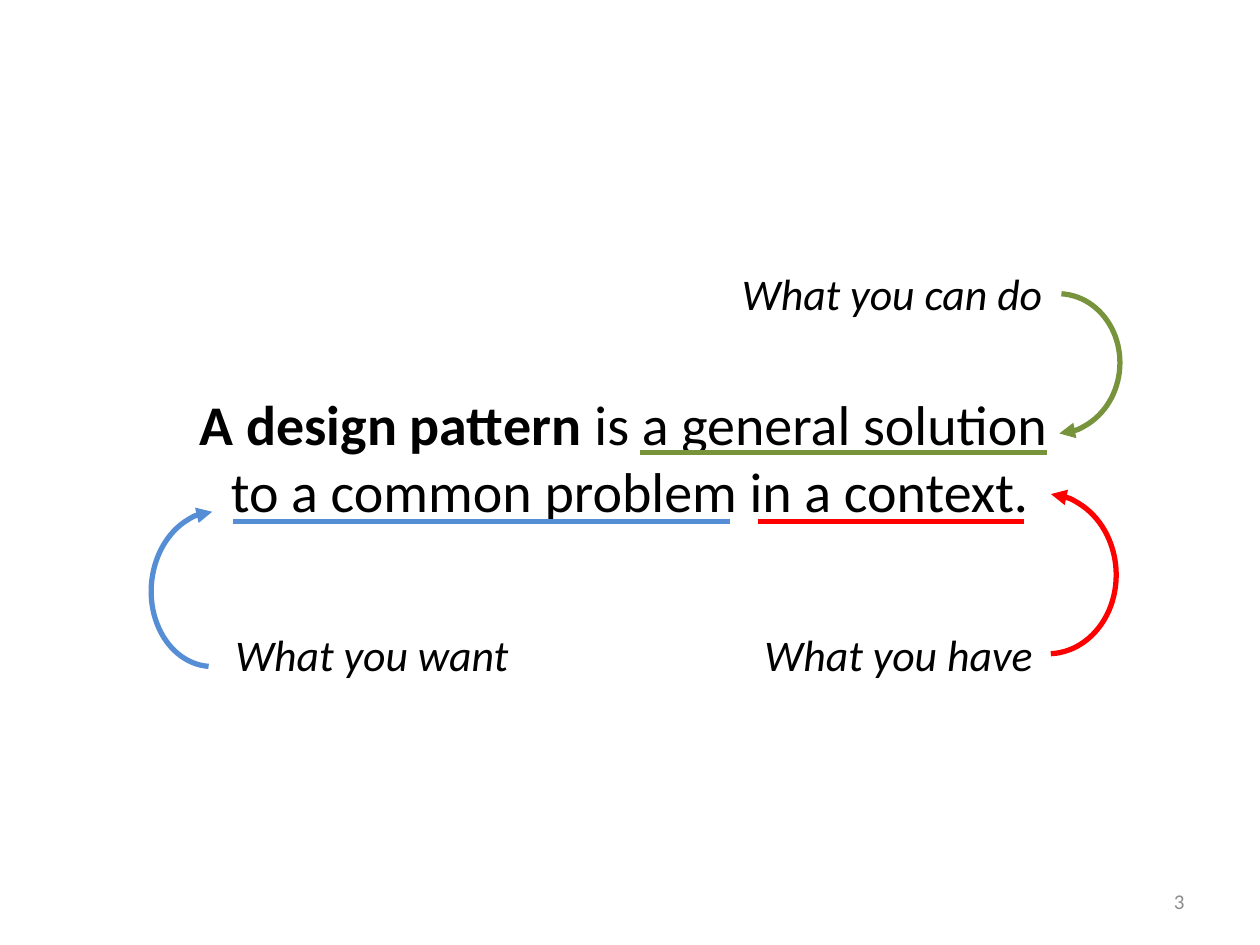
"""Build a slide that explains the parts of a design pattern's definition."""
from dataclasses import dataclass

from lxml.etree import SubElement
from pptx import Presentation
from pptx.dml.color import RGBColor
from pptx.enum.shapes import MSO_CONNECTOR as Link, MSO_SHAPE as Shape
from pptx.enum.text import MSO_ANCHOR as Anchor, MSO_AUTO_SIZE as Fit, PP_ALIGN as Align
from pptx.oxml.ns import qn
from pptx.util import Pt


@dataclass(frozen=True)
class Theme:
    face: str = "Calibri"
    ink: str = "000000"
    gray: str = "8C8C8C"
    green: str = "77933C"
    blue: str = "558ED5"
    red: str = "FF0000"
    lead: int = 32
    label: int = 25
    small: int = 12
    stroke: int = 3


THEME = Theme()


def style(para, size, color, italic=None):
    font = para.font
    font.name, font.size, font.italic = THEME.face, Pt(size), italic
    font.color.rgb = RGBColor.from_string(color)


def place(shape, box):
    shape.left, shape.top, shape.width, shape.height = map(Pt, box)


def draw(line, color):
    line.color.rgb = RGBColor.from_string(color)
    line.width = Pt(THEME.stroke)


def add_lead(slide, box):
    body = slide.placeholders[1]
    place(body, box)
    para = body.text_frame.paragraphs[0]
    para.alignment = Align.CENTER
    style(para, THEME.lead, THEME.ink)
    props = para._p.get_or_add_pPr()
    props.set("marL", "0")
    props.set("indent", "0")
    SubElement(props, qn("a:buNone"))
    term = para.add_run()
    term.text = "A design pattern"
    term.font.bold = True
    para.add_run().text = " is a general solution "
    para.add_line_break()
    para.add_run().text = "to a common problem in a context."


def add_rule(slide, left, right, y, color):
    rule = slide.shapes.add_connector(Link.STRAIGHT, Pt(left), Pt(y), Pt(right), Pt(y))
    draw(rule.line, color)
    SubElement(rule._element.spPr, qn("a:effectLst"))


def add_label(slide, text, box):
    frame = slide.shapes.add_textbox(*map(Pt, box)).text_frame
    frame.word_wrap = False
    frame.auto_size = Fit.SHAPE_TO_FIT_TEXT
    para = frame.paragraphs[0]
    para.text = text
    style(para, THEME.label, THEME.ink, italic=True)


def add_arc(slide, box, turn, color, flip=False):
    arc = slide.shapes.add_shape(Shape.ARC, *map(Pt, box))
    arc.adjustments[0], arc.adjustments[1] = 162, 50.574
    arc.rotation = turn
    arc.fill.background()
    draw(arc.line, color)
    arc.shadow.inherit = False
    props = arc._element.spPr
    SubElement(props.find(qn("a:ln")), qn("a:tailEnd"), type="triangle")
    if flip:
        props.find(qn("a:xfrm")).set("flipH", "1")


def add_number(slide, box):
    frame = slide.shapes.add_textbox(*map(Pt, box)).text_frame
    frame.word_wrap = True
    frame.vertical_anchor = Anchor.MIDDLE
    para = frame.paragraphs[0]
    para.text = "3"
    para.alignment = Align.RIGHT
    style(para, THEME.small, THEME.gray)


def main():
    deck = Presentation()
    deck.slide_width, deck.slide_height = Pt(720), Pt(540)
    slide = deck.slides.add_slide(deck.slide_layouts[1])
    title = slide.shapes.title._element
    title.getparent().remove(title)

    add_lead(slide, (36, 219, 648, 96.5))
    for left, right, y, color in (
        (365.8, 598.3, 258.5, THEME.green),
        (133.2, 416.9, 298, THEME.blue),
        (433.4, 585.4, 298, THEME.red),
    ):
        add_rule(slide, left, right, y, color)
    for text, box in (
        ("What you have", (429.8, 355, 168.5, 37.4)),
        ("What you want", (127.4, 355, 171.4, 37.4)),
        ("What you can do", (416.9, 149, 188, 37.4)),
    ):
        add_label(slide, text, box)
    add_arc(slide, (568, 167.8, 72, 80), 3.7, THEME.green)
    add_arc(slide, (558.7, 282.2, 79.2, 91.4), 177.2, THEME.red, flip=True)
    add_arc(slide, (86.4, 292.3, 72, 88.6), 184.2, THEME.blue)
    add_number(slide, (516, 500.5, 168, 28.75))
    deck.save("out.pptx")


if __name__ == "__main__":
    main()
